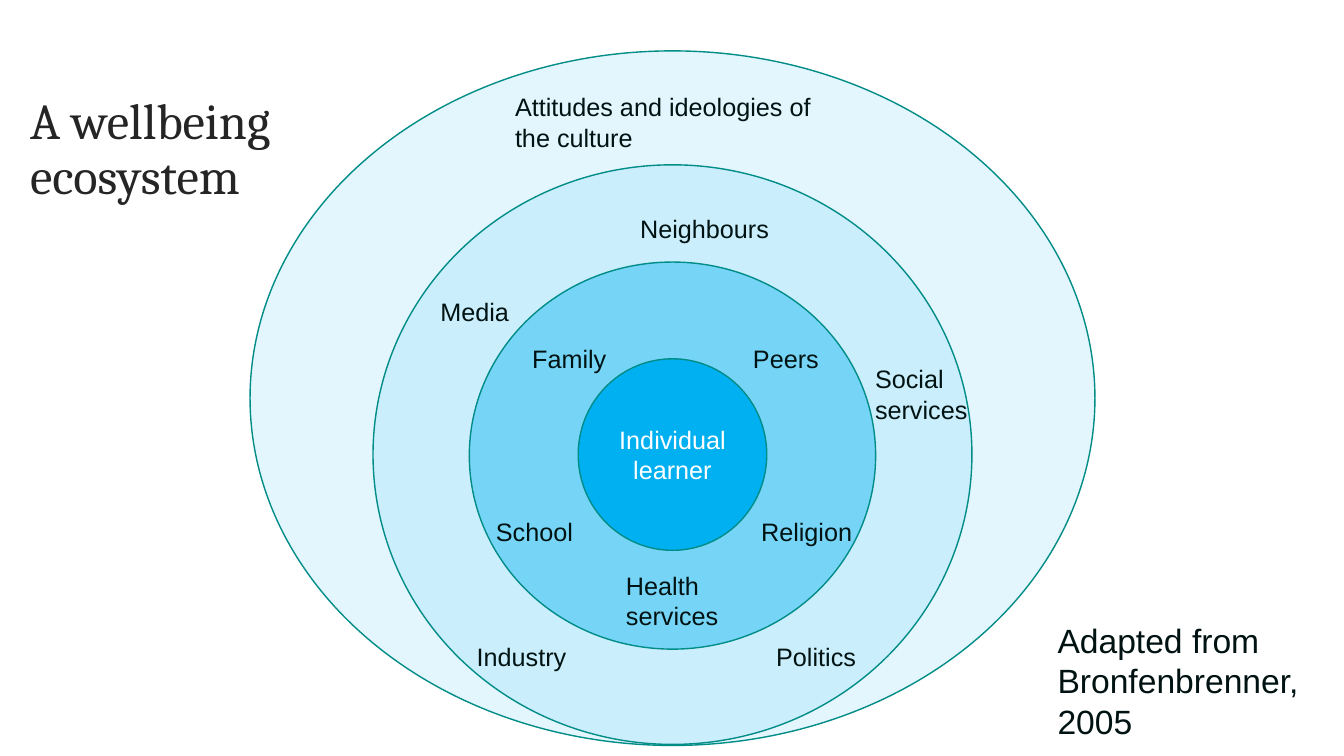
from lxml import etree
from pptx import Presentation
from pptx.dml.color import RGBColor
from pptx.enum.shapes import MSO_SHAPE as SHAPE
from pptx.enum.text import MSO_ANCHOR as ANCHOR, PP_ALIGN as ALIGN
from pptx.oxml.ns import qn
from pptx.util import Inches, Pt

BLUE, TEAL, INK, TITLE_INK, WHITE = "00B0F0", "008C87", "001312", "252525", "FFFFFF"
CENTER_X = 6.67

# center y, width, height, opacity in percent; outermost first
RINGS = [
    (3.95, 8.38, 6.89, 11),
    (4.51, 5.94, 5.75, 11),
    (4.52, 4.03, 3.84, 41),
    (4.51, 1.87, 1.9, 100),
]

# text, left, top, width, height
INNER_LABELS = [
    ("Family", 5.18, 3.36, 1.1, 0.4),
    ("Peers", 7.37, 3.36, 1.1, 0.4),
    ("Religion", 7.45, 5.07, 1.25, 0.4),
    ("School", 4.82, 5.07, 1.1, 0.4),
    ("Health services", 6.11, 5.61, 1.35, 0.71),
]
MIDDLE_LABELS = [
    ("Neighbours", 6.25, 2.07, 1.51, 0.4),
    ("Social services", 8.58, 3.56, 1.41, 0.71),
    ("Politics", 7.6, 6.31, 1.1, 0.4),
    ("Media", 4.27, 2.89, 1.1, 0.4),
    ("Industry", 4.63, 6.31, 1.1, 0.4),
]
OUTER_LABELS = [("Attitudes and ideologies of the culture", 5.01, 0.86, 3.46, 0.71)]


def rgb(color):
    return RGBColor.from_string(color)


def add_run(p, text, size, color, font="Arial"):
    r = p.add_run()
    r.text = text
    r.font.name = font
    r.font.size = Pt(size)
    r.font.color.rgb = rgb(color)


def add_box(slide, left, top, width, height):
    """Add an empty wrapping text box and return its text frame."""
    s = slide.shapes.add_textbox(*map(Inches, (left, top, width, height)))
    s.text_frame.word_wrap = True
    return s.text_frame


def add_title(slide, lines, left, top, width, height):
    tf = add_box(slide, left, top, width, height)
    tf.vertical_anchor = ANCHOR.MIDDLE
    p = tf.paragraphs[0]
    p.line_spacing = 0.9
    for i, line in enumerate(lines):
        if i:
            p.add_line_break()
        add_run(p, line, 36, TITLE_INK, "Cambria")


def add_label(slide, text, left, top, width, height, size=18):
    tf = add_box(slide, left, top, width, height)
    add_run(tf.paragraphs[0], text, size, INK)


def add_ring(slide, center_y, width, height, opacity):
    s = slide.shapes.add_shape(
        SHAPE.OVAL, Inches(CENTER_X - width / 2), Inches(center_y - height / 2),
        Inches(width), Inches(height))
    s.shadow.inherit = False
    s.fill.solid()
    s.fill.fore_color.rgb = rgb(BLUE)
    if opacity < 100:
        color = s.fill._xPr.find(qn("a:solidFill"))[0]
        etree.SubElement(color, qn("a:alpha")).set("val", str(opacity * 1000))
    s.line.color.rgb = rgb(TEAL)
    s.line.width = Pt(1)
    return s


def add_ecosystem(slide):
    """Draw the rings from the outside in, then the labels on them."""
    for ring in RINGS:
        core = add_ring(slide, *ring)
    tf = core.text_frame
    tf.word_wrap = True
    tf.vertical_anchor = ANCHOR.MIDDLE
    p = tf.paragraphs[0]
    p.alignment = ALIGN.CENTER
    add_run(p, "Individual learner", 18, WHITE)
    for label in INNER_LABELS + MIDDLE_LABELS + OUTER_LABELS:
        add_label(slide, *label)


def main():
    prs = Presentation()
    prs.slide_width, prs.slide_height = Inches(13.33), Inches(7.5)
    slide = prs.slides.add_slide(prs.slide_layouts[6])
    add_title(slide, ("A wellbeing ", "ecosystem"), 0.2, 1.1, 12.72, 0.79)
    add_ecosystem(slide)
    add_label(slide, "Adapted from Bronfenbrenner, 2005", 10.39, 6.1, 2.79, 1.31, size=24)
    prs.save("out.pptx")


if __name__ == "__main__":
    main()
